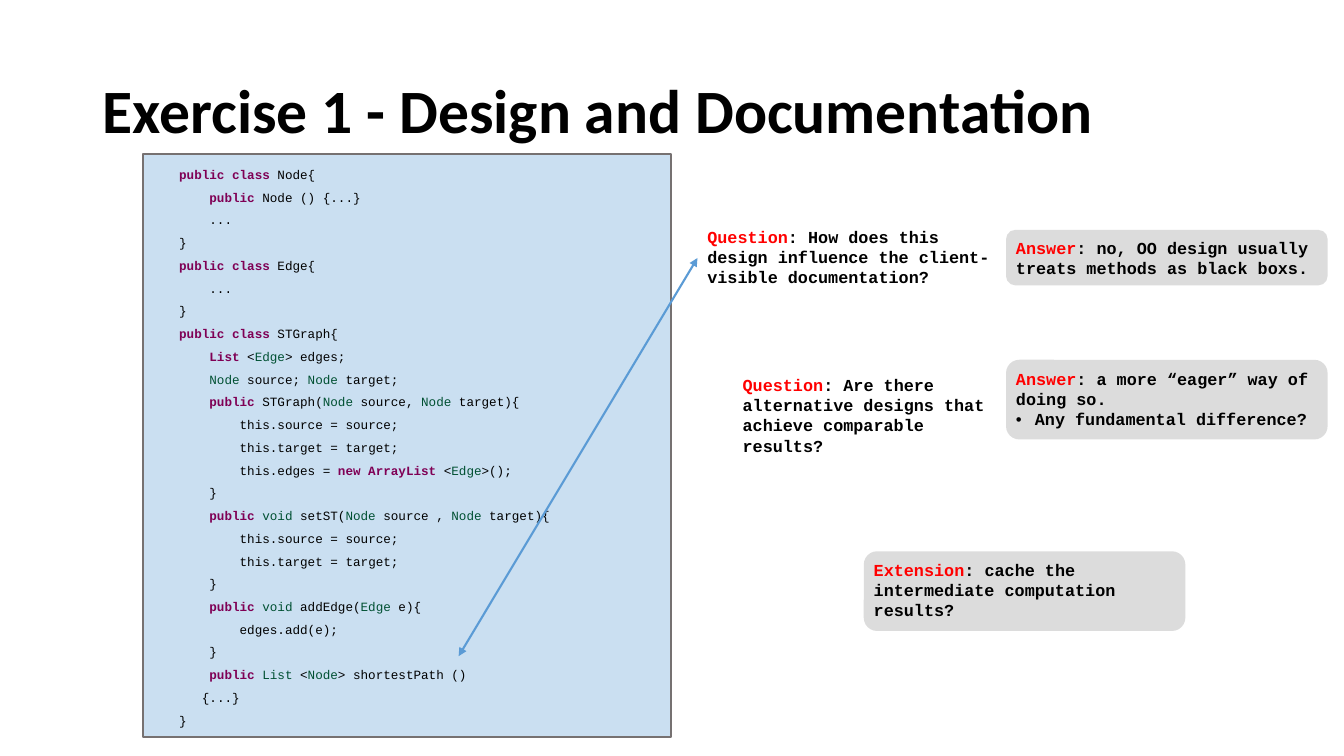
from lxml import etree
from pptx import Presentation, util as u
from pptx.dml.color import RGBColor
from pptx.enum import shapes, text
from pptx.oxml.ns import qn

BLACK, RED, KEYWORD, TYPE = "000000", "FF0000", "7F0055", "005032"
CODE_FONT = "Courier New"
INDENT = 5.4  # width of one code character

# Each line: indent in characters, then code with *keywords* and ~types~
CODE = [
    (0, "*public class* Node{"),
    (4, "*public* Node () {...}"),
    (4, "..."),
    (0, "}"),
    (0, "*public class *Edge{"),
    (4, "..."),
    (0, "}"),
    (0, "*public class *STGraph{"),
    (4, "*List* <~Edge~> edges;"),
    (4, "~Node~ source; ~Node~ target;"),
    (4, "*public *STGraph(~Node~ source, ~Node~ target){"),
    (8, "this.source = source;"),
    (8, "this.target = target;"),
    (8, "this.edges = *new ArrayList* <~Edge~>();"),
    (4, "}"),
    (4, "*public *~void ~setST(~Node~ source , ~Node~ target){"),
    (8, "this.source = source;"),
    (8, "this.target = target;"),
    (4, "}"),
    (4, "*public *~void ~addEdge(~Edge~ e){"),
    (8, "edges.add(e);"),
    (4, "}"),
    (4, "*public *~List~ <~Node~> shortestPath ()"),
    (3, "{...}"),
    (0, "}"),
]

# Each note: text box, backing box or None, label, statement, bullet items
NOTES = [
    ((498.2, 158.4, 223.2, 51), None, "Question",
     ": How does this design influence the client-visible documentation?", []),
    ((718.6, 166.3, 241.2, 51), (718.6, 164.2, 229.7, 39.6), "Answer",
     ": no, OO design usually treats methods as black boxs.", []),
    ((523.4, 264.2, 198.7, 65.5), None, "Question",
     ": Are there alternative designs that achieve comparable results?", []),
    ((617, 396, 241.2, 65.5), (617, 393.8, 229.7, 56.9), "Extension",
     ": cache the intermediate computation results?", []),
    ((718.6, 259.9, 241.2, 51), (718.6, 257, 229.7, 56.9), "Answer",
     ": a more “eager” way of doing so.", ["Any fundamental difference?"]),
]


def color(value):
    return RGBColor.from_string(value)


def points(*values):
    return [u.Pt(value) for value in values]


def add_run(paragraph, content, hue, **format_values):
    run = paragraph.add_run()
    run.text = content
    run.font.color.rgb = color(hue)
    for name, value in format_values.items():
        setattr(run.font, name, value)


def set_indent(paragraph, left, first=0):
    properties = paragraph._p.get_or_add_pPr()
    properties.set("marL", str(u.Pt(left)))
    properties.set("indent", str(u.Pt(first)))
    return properties


def add_panel(slide, kind, box, fill, opacity):
    panel = slide.shapes.add_shape(kind, *points(*box))
    panel.shadow.inherit = False
    panel.fill.solid()
    panel.fill.fore_color.rgb = color(fill)
    hue = panel._element.spPr.find(".//" + qn("a:srgbClr"))
    etree.SubElement(hue, qn("a:alpha")).set("val", str(opacity * 1000))
    panel.line.fill.background()
    return panel


def add_text_frame(slide, box):
    frame = slide.shapes.add_textbox(*points(*box)).text_frame
    frame.word_wrap = True
    frame.auto_size = text.MSO_AUTO_SIZE.SHAPE_TO_FIT_TEXT
    return frame


def add_title(slide, box, content):
    title = slide.shapes.title
    for name, value in zip(("left", "top", "width", "height"), points(*box)):
        setattr(title, name, value)
    frame = title.text_frame
    frame.auto_size = text.MSO_AUTO_SIZE.NONE
    frame.vertical_anchor = text.MSO_ANCHOR.MIDDLE
    paragraph = frame.paragraphs[0]
    paragraph.alignment = text.PP_ALIGN.LEFT
    paragraph.line_spacing = 0.9
    add_run(paragraph, content, BLACK, name="Calibri", size=u.Pt(44), bold=True)


def add_code(slide, box):
    left, top, width, height = box
    panel = add_panel(slide, shapes.MSO_SHAPE.RECTANGLE, box, "BDD7EE", 80)
    panel.line.color.rgb = color("767171")
    panel.line.width = u.Pt(1.5)
    frame = add_text_frame(slide, (left + 18.7, top, width - 18.7, height))
    for index, (indent, line) in enumerate(CODE):
        paragraph = frame.add_paragraph() if index else frame.paragraphs[0]
        paragraph.line_spacing = 1.5
        set_indent(paragraph, indent * INDENT)
        for part, chunk in enumerate(line.split("*")):
            for piece, content in enumerate(chunk.split("~")):
                bold = part % 2 == 1
                hue = KEYWORD if bold else TYPE if piece % 2 else BLACK
                if content:
                    add_run(paragraph, content, hue, name=CODE_FONT,
                            size=u.Pt(9), bold=bold)


def add_arrow(slide, start, end):
    arrow = slide.shapes.add_connector(
        shapes.MSO_CONNECTOR.STRAIGHT, *points(*start, *end))
    arrow.line.color.rgb = color("5B9BD5")
    arrow.line.width = u.Pt(1.5)
    for tag in ("a:headEnd", "a:tailEnd"):
        etree.SubElement(arrow.line._get_or_add_ln(), qn(tag)).set("type", "triangle")
    etree.SubElement(arrow._element.spPr, qn("a:effectLst"))


def add_note(slide, box, backing, label, statement, items):
    style = dict(name=CODE_FONT, size=u.Pt(12), bold=True)
    if backing:
        add_panel(slide, shapes.MSO_SHAPE.ROUNDED_RECTANGLE, backing, "BFBFBF", 54)
    frame = add_text_frame(slide, box)
    add_run(frame.paragraphs[0], label, RED, **style)
    add_run(frame.paragraphs[0], statement, BLACK, **style)
    for item in items:
        paragraph = frame.add_paragraph()
        properties = set_indent(paragraph, 13.5, -13.5)
        etree.SubElement(properties, qn("a:buFont")).set("typeface", "Arial")
        etree.SubElement(properties, qn("a:buChar")).set("char", "•")
        add_run(paragraph, item, BLACK, **style)


def main():
    presentation = Presentation()
    presentation.slide_width, presentation.slide_height = points(960, 540)
    slide = presentation.slides.add_slide(presentation.slide_layouts[5])
    # Heading
    add_title(slide, (66, 28.8, 828, 104.4), "Exercise 1 - Design and Documentation")
    # Class listing and its link to the first question
    add_code(slide, (102.2, 110.2, 377.3, 416.2))
    add_arrow(slide, (327.6, 468.7), (498.2, 184.3))
    # Questions, answers and extension
    for note in NOTES:
        add_note(slide, *note)
    presentation.save("out.pptx")


if __name__ == "__main__":
    main()
